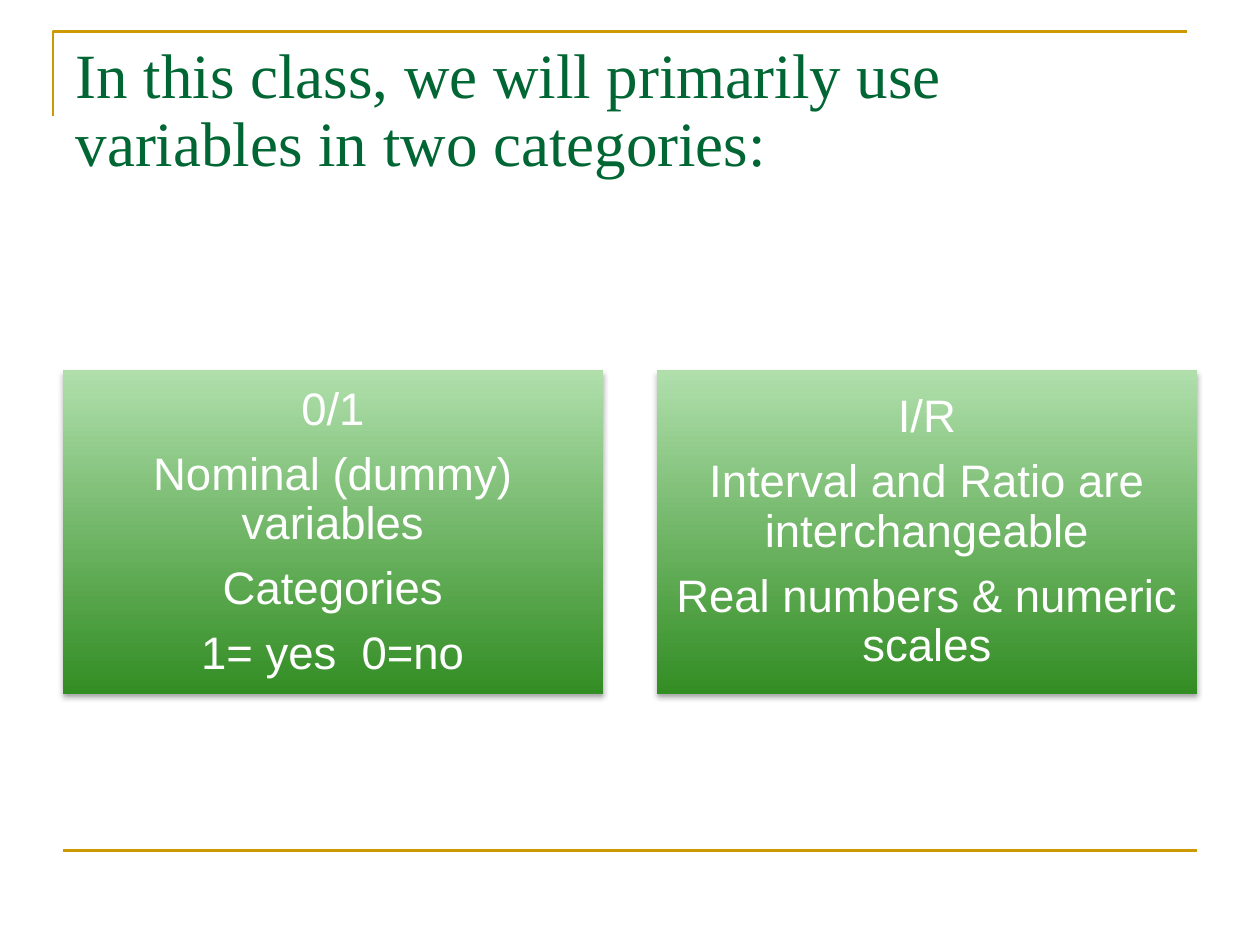
from lxml import etree
from pptx import Presentation
from pptx.dml.color import RGBColor
from pptx.enum.shapes import MSO_CONNECTOR, MSO_SHAPE
from pptx.enum.text import MSO_ANCHOR, PP_ALIGN
from pptx.oxml import parse_xml
from pptx.oxml.ns import nsdecls, qn
from pptx.util import Inches, Pt

RECT = MSO_SHAPE.RECTANGLE
STRAIGHT = MSO_CONNECTOR.STRAIGHT
TOP, MIDDLE = MSO_ANCHOR.TOP, MSO_ANCHOR.MIDDLE
LEFT, CENTER = PP_ALIGN.LEFT, PP_ALIGN.CENTER

COLORS = {"rule": "CC9900", "title": "006633", "dark": "328D23",
          "light": "B0DFAC", "text": "FFFFFF", "shadow": "000000"}
WIDTH, HEIGHT = 10, 7.5
MARGIN = 0.05 * WIDTH
CONTENT = WIDTH - 2 * MARGIN
GAP = 0.43
CARD_W = (CONTENT - GAP) / 2
CARD_H = 0.6 * CARD_W
CARD_TOP = 2.94
CARDS = [
    ["0/1", "Nominal (dummy) variables", "Categories", "1= yes  0=no"],
    ["I/R", "Interval and Ratio are interchangeable",
     "Real numbers & numeric scales"],
]


def rgb(name):
    return RGBColor.from_string(COLORS[name])


def format_paragraph(p, font, size, color, align):
    p.alignment = align
    p.line_spacing = 0.9
    p.font.name = font
    p.font.size = Pt(size)
    p.font.color.rgb = rgb(color)


def style_rule(s):
    """Give a line the accent colour and no shadow."""
    s.line.color.rgb = rgb("rule")
    s.line.width = Pt(1.5)
    if s._element.spPr.find(qn("a:effectLst")) is None:
        etree.SubElement(s._element.spPr, qn("a:effectLst"))


def add_rules(slide):
    left, top = 0.42, 0.25
    builder = slide.shapes.build_freeform(
        Inches(left), Inches(top + 0.67))
    builder.add_line_segments(
        [(Inches(left), Inches(top)), (Inches(left + CONTENT), Inches(top))],
        close=False)
    corner = builder.convert_to_shape()
    corner.fill.background()
    style_rule(corner)

    y = Inches(0.9 * HEIGHT)
    style_rule(slide.shapes.add_connector(
        STRAIGHT, Inches(MARGIN), y, Inches(WIDTH - MARGIN), y))


def set_title(slide, text):
    s = slide.shapes.title
    s.left, s.top = Inches(MARGIN), Inches(0.3)
    s.width, s.height = Inches(CONTENT), Inches(1.25)
    tf = s.text_frame
    tf.text = text
    tf.word_wrap = True
    tf.vertical_anchor = TOP
    format_paragraph(tf.paragraphs[0], "Times New Roman", 36, "title", LEFT)


def add_soft_shadow(s):
    s._element.spPr.append(parse_xml(
        f'<a:effectLst {nsdecls("a")}>'
        f'<a:outerShdw blurRad="{Pt(3.1)}" dist="{Pt(1.8)}" dir="5400000" '
        'rotWithShape="0">'
        f'<a:srgbClr val="{COLORS["shadow"]}"><a:alpha val="35000"/></a:srgbClr>'
        '</a:outerShdw></a:effectLst>'))


def add_card(slide, column, lines):
    s = slide.shapes.add_shape(
        RECT, Inches(MARGIN + column * (CARD_W + GAP)), Inches(CARD_TOP),
        Inches(CARD_W), Inches(CARD_H))
    s.fill.gradient()
    s.fill.gradient_angle = 90
    for stop, name in zip(s.fill.gradient_stops, ("dark", "light")):
        stop.color.rgb = rgb(name)
    s.line.fill.background()
    add_soft_shadow(s)

    tf = s.text_frame
    tf.word_wrap = True
    tf.vertical_anchor = MIDDLE
    tf.margin_left = tf.margin_right = Inches(0.11)
    tf.margin_top = tf.margin_bottom = Inches(0.11)
    tf.text = "\n".join(lines)
    for p in tf.paragraphs:
        format_paragraph(p, "Arial", 26, "text", CENTER)
        p.space_after = Pt(9.1)


def main():
    prs = Presentation()
    prs.slide_width, prs.slide_height = Inches(WIDTH), Inches(HEIGHT)
    slide = prs.slides.add_slide(prs.slide_layouts[5])
    add_rules(slide)
    set_title(slide, "In this class, we will primarily use variables "
                     "in two categories:")
    for column, lines in enumerate(CARDS):
        add_card(slide, column, lines)
    prs.save("out.pptx")


if __name__ == "__main__":
    main()
